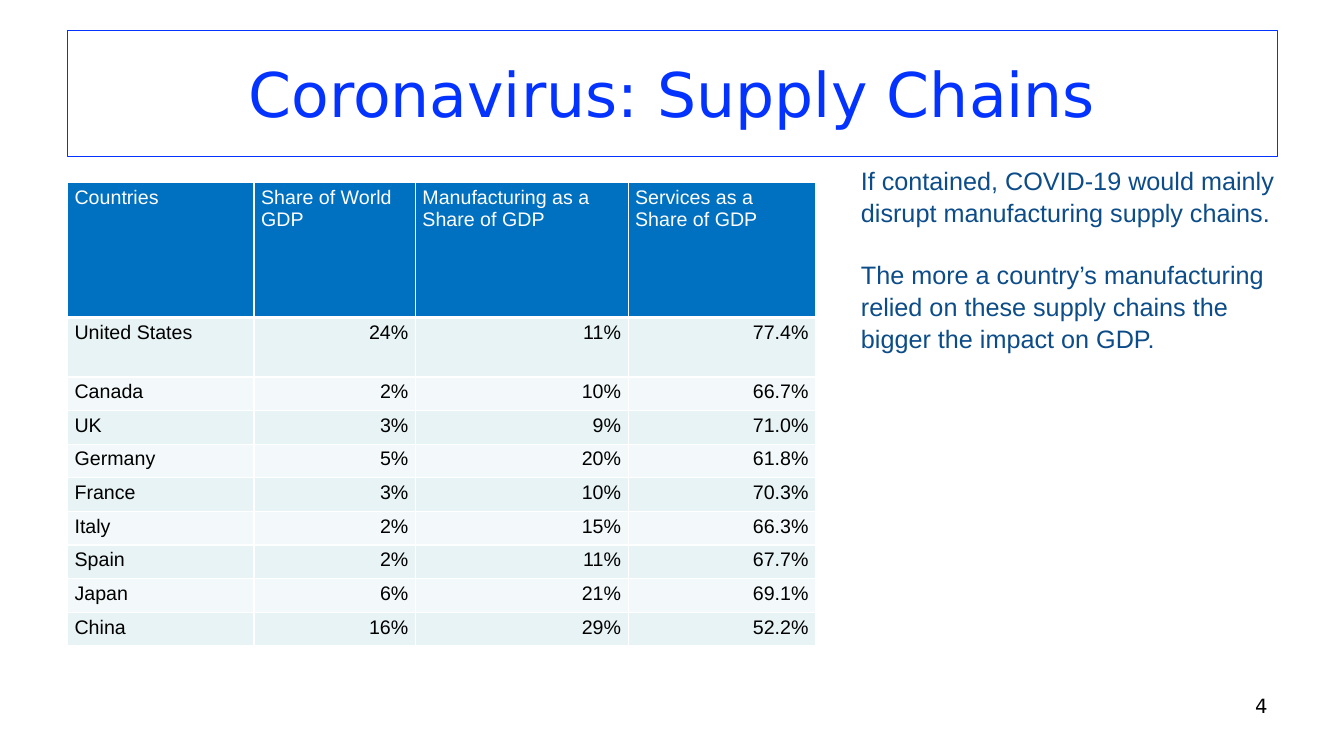
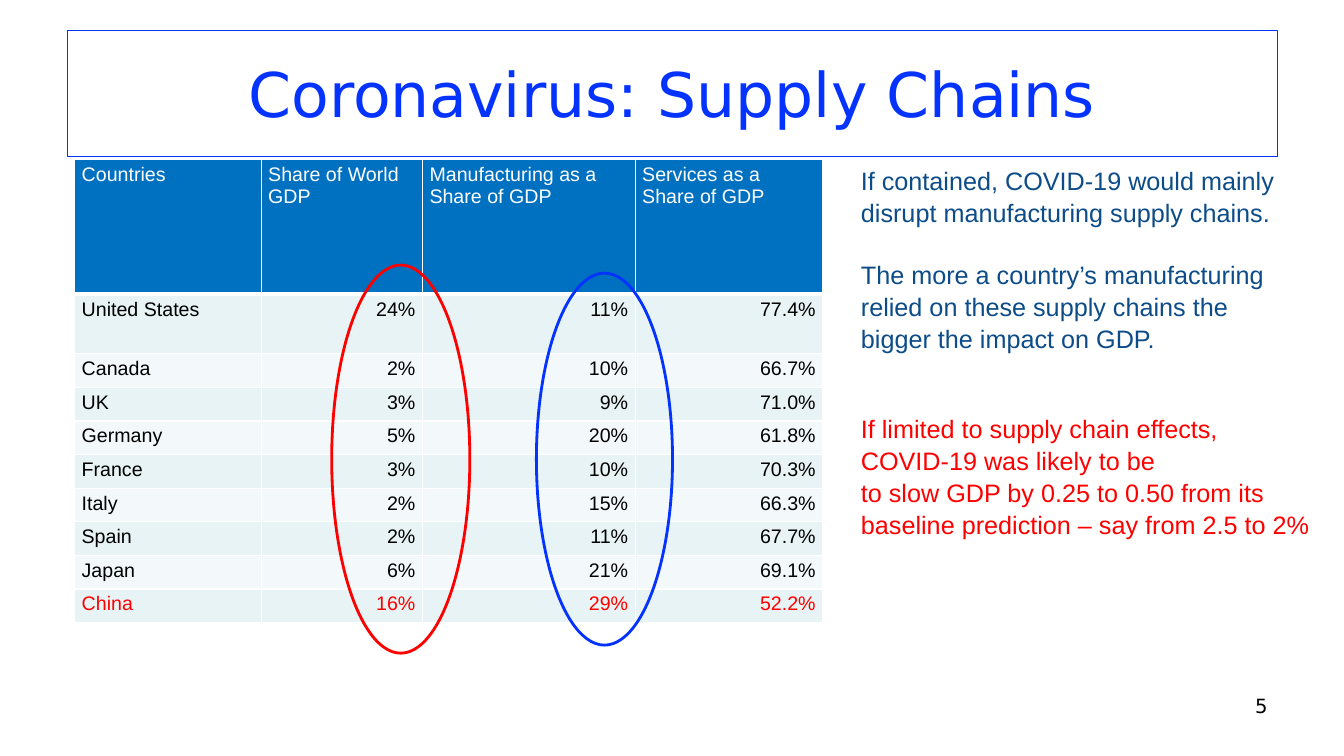
from lxml import etree
from pptx import Presentation
from pptx.dml.color import RGBColor
from pptx.enum.shapes import MSO_SHAPE
from pptx.enum.text import MSO_ANCHOR, PP_ALIGN
from pptx.oxml.ns import qn
from pptx.util import Inches, Pt

RECTANGLE, OVAL = MSO_SHAPE.RECTANGLE, MSO_SHAPE.OVAL
LEFT, CENTER, RIGHT = PP_ALIGN.LEFT, PP_ALIGN.CENTER, PP_ALIGN.RIGHT
MIDDLE = MSO_ANCHOR.MIDDLE

COLORS = {
    "blue": "0432FF",
    "navy": "0C4C88",
    "red": "FF0000",
    "black": "000000",
    "white": "FFFFFF",
    "header": "0070C0",
    "band_dark": "E7F3F4",
    "band_light": "F3F9FA",
}

# Text styles shared by both slides
STYLES = {
    "title": {"name": "DejaVu Sans", "size": Pt(44)},
    "number": {"name": "DejaVu Sans", "size": Pt(14)},
    "body": {"name": "Arial", "size": Pt(18)},
    "cell": {"name": "Arial", "size": Pt(14)},
}
BODY_SPACING = 1.05
BLANK_LINE = Pt(21.7)

# Table content and grid
HEADINGS = ["Countries", "Share of World GDP",
            "Manufacturing as a Share of GDP", "Services as a Share of GDP"]
COUNTRIES = [
    ["United States", "24%", "11%", "77.4%"],
    ["Canada", "2%", "10%", "66.7%"],
    ["UK", "3%", "9%", "71.0%"],
    ["Germany", "5%", "20%", "61.8%"],
    ["France", "3%", "10%", "70.3%"],
    ["Italy", "2%", "15%", "66.3%"],
    ["Spain", "2%", "11%", "67.7%"],
    ["Japan", "6%", "21%", "69.1%"],
    ["China", "16%", "29%", "52.2%"],
]
COLUMN_WIDTHS = [1.85, 1.6, 2.11, 1.86]
TABLE_HEIGHT = 4.6
TALL_ROWS = [1.34, 0.59]
CELL_MARGINS = {"margin_left": Inches(0.07), "margin_right": Inches(0.07),
                "margin_top": Inches(0.04), "margin_bottom": Inches(0.04)}

# Commentary: each inner list is a block of lines
MAIN_POINTS = [
    ["If contained, COVID-19 would mainly disrupt manufacturing supply chains."],
    ["The more a country’s manufacturing",
     "relied on these supply chains the",
     "bigger the impact on GDP."],
]
GROWTH_POINT = [
    ["If limited to supply chain effects,",
     "COVID-19 was likely to be",
     "to slow GDP by 0.25 to 0.50 from its",
     "baseline prediction – say from 2.5 to 2%"],
]


def rgb(color):
    return RGBColor.from_string(COLORS[color])


def set_values(target, values):
    for name, value in values.items():
        setattr(target, name, value)


def write(para, text, style, color, align=LEFT):
    span = para.add_run()
    span.text = text
    para.alignment = align
    set_values(span.font, STYLES[style])
    span.font.color.rgb = rgb(color)


def add_outline(page, kind, place, color, width):
    shape = page.shapes.add_shape(kind, *map(Inches, place))
    shape.shadow.inherit = False
    shape.fill.background()
    shape.line.color.rgb = rgb(color)
    shape.line.width = Pt(width)
    return shape


def add_text_box(page, place):
    frame = page.shapes.add_textbox(*map(Inches, place)).text_frame
    frame.word_wrap = True
    return frame


def add_commentary(page, place, blocks, color):
    frame = add_text_box(page, place)
    para = frame.paragraphs[0]
    for block_index, lines in enumerate(blocks):
        for line_index, line in enumerate(lines):
            if block_index or line_index:
                para = frame.add_paragraph()
            if block_index and not line_index:
                para.space_before = BLANK_LINE
            para.line_spacing = BODY_SPACING
            write(para, line, "body", color)


def set_borders(cell, bottom):
    properties = cell._tc.get_or_add_tcPr()
    for side, width in {"L": 1, "R": 1, "T": 1, "B": bottom}.items():
        line = etree.SubElement(properties, qn(f"a:ln{side}"), w=str(Pt(width)))
        fill = etree.SubElement(line, qn("a:solidFill"))
        etree.SubElement(fill, qn("a:srgbClr"), val=COLORS["white"])


def add_country_table(page, left, top, highlight=None):
    rows = [HEADINGS] + COUNTRIES
    short_count = len(rows) - len(TALL_ROWS)
    short_height = (TABLE_HEIGHT - sum(TALL_ROWS)) / short_count
    heights = TALL_ROWS + [short_height] * short_count
    table = page.shapes.add_table(
        len(rows), len(HEADINGS), Inches(left), Inches(top),
        Inches(sum(COLUMN_WIDTHS)), Inches(TABLE_HEIGHT)).table
    for column, width in zip(table.columns, COLUMN_WIDTHS):
        column.width = Inches(width)
    for row_index, (values, height) in enumerate(zip(rows, heights)):
        table.rows[row_index].height = Inches(height)
        is_header = row_index == 0
        if is_header:
            fill, color = "header", "white"
        else:
            fill = "band_dark" if row_index % 2 else "band_light"
            color = "red" if values[0] == highlight else "black"
        for column_index, value in enumerate(values):
            cell = table.cell(row_index, column_index)
            set_values(cell, CELL_MARGINS)
            set_borders(cell, bottom=3 if is_header else 1)
            cell.fill.solid()
            cell.fill.fore_color.rgb = rgb(fill)
            align = RIGHT if column_index and not is_header else LEFT
            write(cell.text_frame.paragraphs[0], value, "cell", color, align)


def add_supply_chain_page(deck, number):
    """Add a page with the title, page number and main points."""
    page = deck.slides.add_slide(deck.slide_layouts[6])
    title = add_outline(page, RECTANGLE, (0.67, 0.3, 12, 1.25), "blue", 0.75)
    title.text_frame.vertical_anchor = MIDDLE
    write(title.text_frame.paragraphs[0], "Coronavirus: Supply Chains",
          "title", "blue", CENTER)
    footer = add_text_box(page, (9.56, 6.83, 3.11, 0.52))
    write(footer.paragraphs[0], str(number), "number", "black", RIGHT)
    add_commentary(page, (8.44, 1.58, 4.68, 1.92), MAIN_POINTS, "navy")
    return page


def main():
    deck = Presentation()
    deck.slide_width, deck.slide_height = Inches(13.33), Inches(7.5)

    # Country shares
    page = add_supply_chain_page(deck, 4)
    add_country_table(page, 0.67, 1.81)

    # Country shares with the key columns circled
    page = add_supply_chain_page(deck, 5)
    add_country_table(page, 0.74, 1.58, highlight="China")
    add_outline(page, OVAL, (5.32, 2.71, 1.35, 3.69), "blue", 2)
    add_outline(page, OVAL, (3.29, 2.63, 1.37, 3.85), "red", 2)
    add_commentary(page, (8.44, 4.04, 4.69, 1.31), GROWTH_POINT, "red")

    deck.save("out.pptx")


if __name__ == "__main__":
    main()
